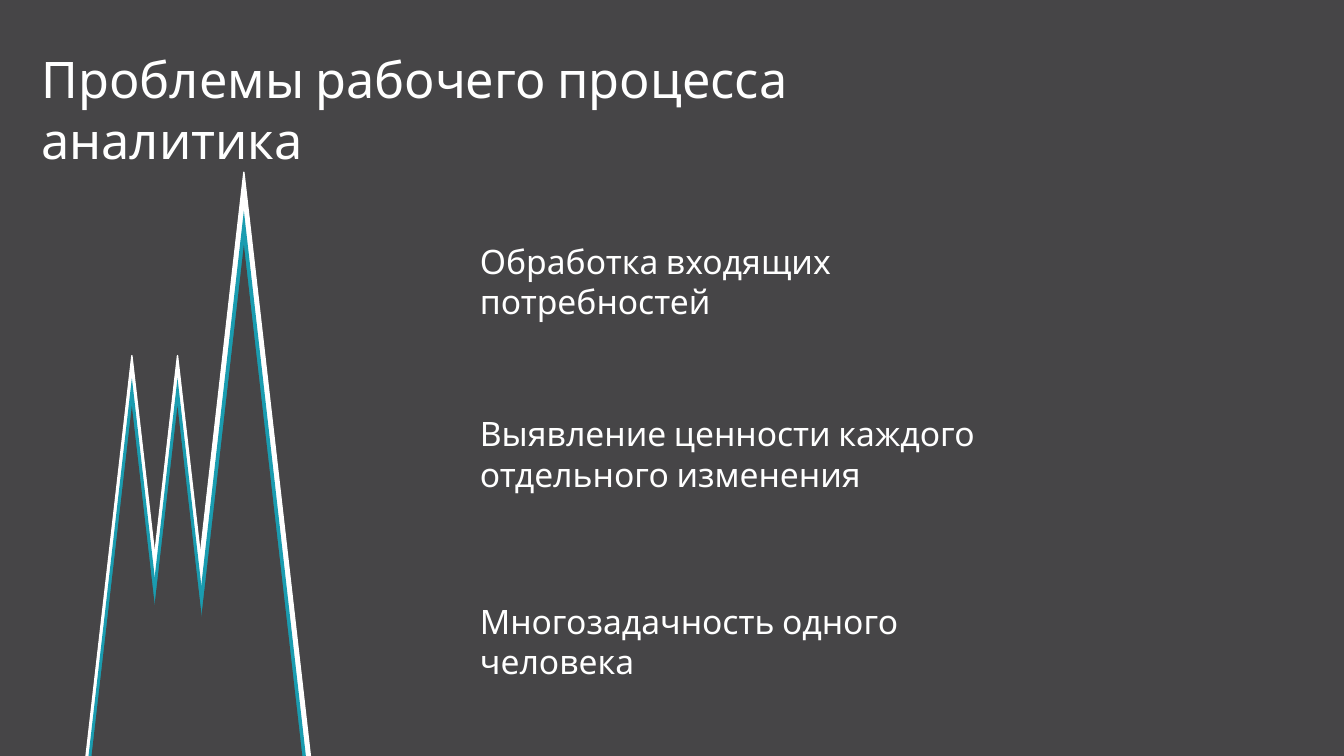
from pptx import Presentation
from pptx.dml.color import RGBColor as Rgb
from pptx.enum.shapes import MSO_SHAPE as Kind
from pptx.enum.text import MSO_ANCHOR as Anchor, MSO_AUTO_SIZE as Fit, PP_ALIGN as Align
from pptx.util import Pt

HUES = {"white": "FFFFFF", "teal": "1A9CB0", "dark": "464547"}
FONT = "Cabin"


def hue(name):
    """Return the named colour."""
    return Rgb.from_string(HUES[name])


def write(shape, text, size):
    """Fill a shape with one left-aligned white run that wraps."""
    frame = shape.text_frame
    frame.word_wrap = True
    frame.auto_size = Fit.SHAPE_TO_FIT_TEXT
    frame.vertical_anchor = Anchor.TOP
    para = frame.paragraphs[0]
    para.alignment = Align.LEFT
    run = para.add_run()
    run.text = text
    run.font.name = FONT
    run.font.size = Pt(size)
    run.font.color.rgb = hue("white")


def head(slide, box, text):
    """Place the title in its box."""
    title = slide.shapes.title
    title.left, title.top, title.width, title.height = map(Pt, box)
    write(title, text, 36)


def notes(slide, left, items):
    """Stack the points in a column from the left edge given."""
    for top, width, high, text in items:
        area = slide.shapes.add_textbox(Pt(left), Pt(top), Pt(width), Pt(high))
        write(area, text, 24)


def peaks(slide, box):
    """Draw three layers of nested peaks standing on the base of the box."""
    left, top, width, high = box
    base = top + high
    mids = [left + 33, left + 65.6, left + width - 47.5]
    layers = [("white", (65.5, 286), (95, 417)),
              ("teal", (62, 270), (88.6, 389.5)),
              ("dark", (57.6, 250), (83.5, 365))]
    for name, small, tall in layers:
        for mid, (wide, rise) in zip(mids, (small, small, tall)):
            peak = slide.shapes.add_shape(
                Kind.ISOSCELES_TRIANGLE, Pt(mid - wide / 2), Pt(base - rise),
                Pt(wide), Pt(rise))
            peak.shadow.inherit = False
            peak.fill.solid()
            peak.fill.fore_color.rgb = hue(name)
            if name == "white":
                peak.line.color.rgb = hue(name)
                peak.line.width = Pt(1)
            else:
                peak.line.fill.background()


def main():
    """Build the slide and save it."""
    deck = Presentation()
    deck.slide_width, deck.slide_height = Pt(960), Pt(540)
    slide = deck.slides.add_slide(deck.slide_layouts[5])
    slide.background.fill.solid()
    slide.background.fill.fore_color.rgb = hue("dark")
    head(slide, (22.4, 31, 702, 51), "Проблемы рабочего процесса аналитика")
    notes(slide, 335.7, [
        (168.5, 426, 36, "Обработка входящих потребностей"),
        (291.6, 396, 65.5, "Выявление ценности каждого отдельного изменения"),
        (425.5, 402.5, 36, "Многозадачность одного человека")])
    peaks(slide, (61.2, 123, 160.5, 417))
    deck.save("out.pptx")


if __name__ == "__main__":
    main()
